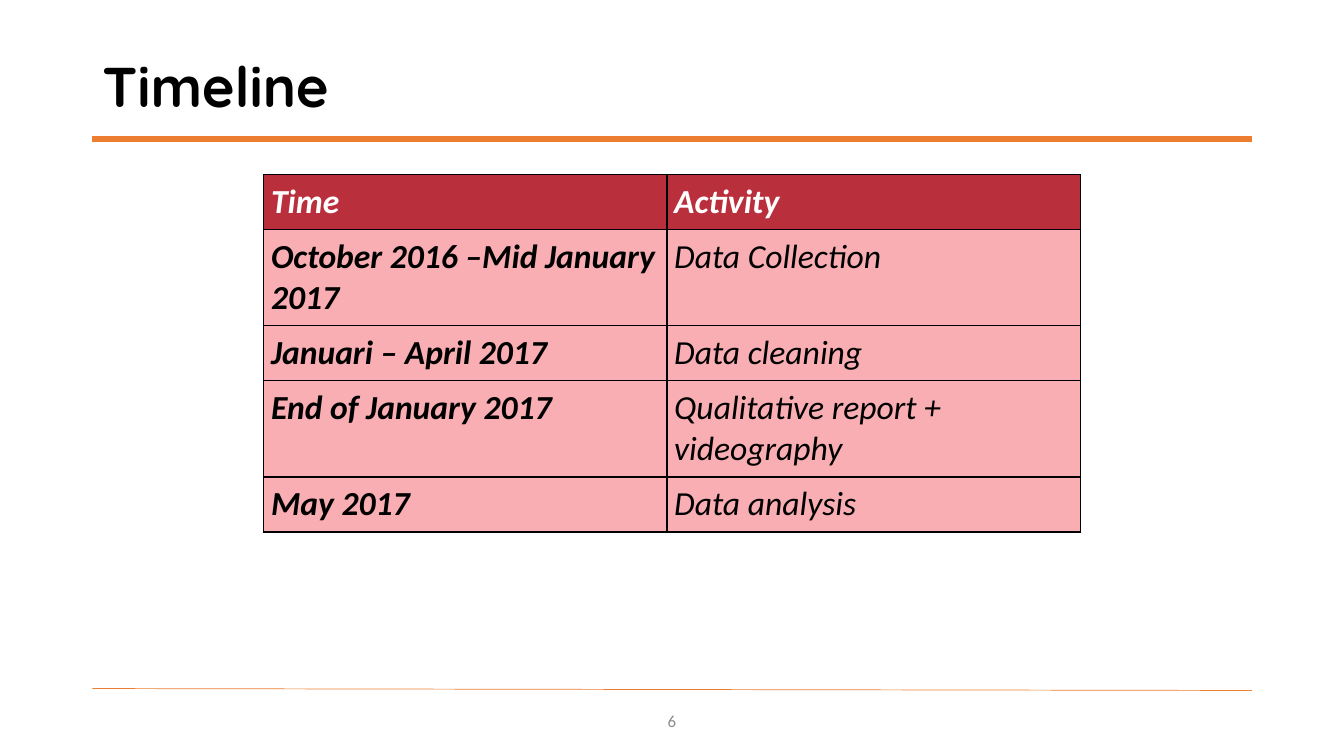
"""Build the project timeline slide."""
from typing import NamedTuple

from lxml import etree
from pptx import Presentation
from pptx.dml.color import RGBColor
from pptx.enum import shapes, text
from pptx.oxml import ns
from pptx.util import Cm, Pt

ORANGE = RGBColor(0xED, 0x7D, 0x31)
BLACK = RGBColor(0x00, 0x00, 0x00)
WHITE = RGBColor(0xFF, 0xFF, 0xFF)
GRAY = RGBColor(0x8C, 0x8C, 0x8C)
CRIMSON = RGBColor(0xBA, 0x2F, 0x3C)
PINK = RGBColor(0xF8, 0xAE, 0xB2)

CELL_MARGIN = Cm(0.18)
COLUMN_WIDTHS = (10.16, 10.41)
ROW_HEIGHTS = (1.39, 2.42, 1.39, 2.42, 1.39)


class Rule(NamedTuple):
    """A horizontal line across the page, in centimetres and points."""
    start: tuple[float, float]
    end: tuple[float, float]
    weight: float


class Label(NamedTuple):
    """A one-line text box, in centimetres and points."""
    words: str
    left: float
    top: float
    width: float
    height: float
    font: str
    size: float
    color: RGBColor
    bold: bool
    align: text.PP_ALIGN
    line_spacing: float


class Stage(NamedTuple):
    """A row of the timeline."""
    time: str
    activity: str


RULES = (
    Rule((2.33, 3.5), (31.55, 3.5), 4),
    Rule((31.55, 17.4), (2.33, 17.35), 0.5),
)
LABELS = (
    Label("Timeline", 2.33, 1.01, 29.21, 2.49, "Quicksand", 40, BLACK, True,
          text.PP_ALIGN.LEFT, 0.9),
    Label("6", 11.22, 17.66, 11.43, 1.01, "Calibri", 12, GRAY, False,
          text.PP_ALIGN.CENTER, 1.0),
)
STAGES = (
    Stage("Time", "Activity"),
    Stage("October 2016 –Mid January 2017", "Data Collection"),
    Stage("Januari – April 2017", "Data cleaning"),
    Stage("End of January 2017", "Qualitative report + videography"),
    Stage("May 2017", "Data analysis"),
)


def draw_rule(page, rule: Rule) -> None:
    """Draw one orange line without a shadow."""
    line = page.shapes.add_connector(
        shapes.MSO_CONNECTOR.STRAIGHT,
        *(Cm(length) for length in rule.start + rule.end))
    line.line.color.rgb = ORANGE
    line.line.width = Pt(rule.weight)
    etree.SubElement(line._element.spPr, ns.qn("a:effectLst"))


def draw_label(page, label: Label) -> None:
    """Draw one vertically centred text box."""
    box = page.shapes.add_textbox(Cm(label.left), Cm(label.top),
                                  Cm(label.width), Cm(label.height))
    frame = box.text_frame
    frame.text = label.words
    frame.word_wrap = True
    frame.vertical_anchor = text.MSO_ANCHOR.MIDDLE
    para = frame.paragraphs[0]
    para.alignment = label.align
    para.line_spacing = label.line_spacing
    font = para.runs[0].font
    font.name, font.size, font.bold = label.font, Pt(label.size), label.bold
    font.color.rgb = label.color


def add_borders(cell) -> None:
    """Give a cell thin black edges."""
    properties = cell._tc.get_or_add_tcPr()
    for position, side in enumerate(("lnL", "lnR", "lnT", "lnB")):
        edge = etree.Element(ns.qn(f"a:{side}"), w=str(Pt(1)))
        fill = etree.SubElement(edge, ns.qn("a:solidFill"))
        etree.SubElement(fill, ns.qn("a:srgbClr"), val=str(BLACK))
        properties.insert(position, edge)


def fill_cell(cell, words: str, header: bool, bold: bool) -> None:
    """Write and style one table cell."""
    cell.text = words
    cell.margin_left = cell.margin_right = CELL_MARGIN
    cell.margin_top = cell.margin_bottom = CELL_MARGIN
    cell.fill.solid()
    cell.fill.fore_color.rgb = CRIMSON if header else PINK
    font = cell.text_frame.paragraphs[0].runs[0].font
    font.name, font.size, font.bold, font.italic = "Calibri", Pt(24), bold, True
    font.color.rgb = WHITE if header else BLACK
    add_borders(cell)


def draw_timeline(page, stages: tuple[Stage, ...]) -> None:
    """Draw the table of stages."""
    table = page.shapes.add_table(
        len(stages), len(COLUMN_WIDTHS), Cm(6.65), Cm(4.4),
        Cm(sum(COLUMN_WIDTHS)), Cm(sum(ROW_HEIGHTS))).table
    for column, width in zip(table.columns, COLUMN_WIDTHS):
        column.width = Cm(width)
    for row, height in zip(table.rows, ROW_HEIGHTS):
        row.height = Cm(height)
    for row_index, stage in enumerate(stages):
        header = row_index == 0
        for column_index, words in enumerate(stage):
            fill_cell(table.cell(row_index, column_index), words, header,
                      header or column_index == 0)


def main() -> None:
    """Assemble and save the deck."""
    deck = Presentation()
    deck.slide_width, deck.slide_height = Cm(33.87), Cm(19.05)
    page = deck.slides.add_slide(deck.slide_layouts[6])
    for rule in RULES:
        draw_rule(page, rule)
    for label in LABELS:
        draw_label(page, label)
    draw_timeline(page, STAGES)
    deck.save("out.pptx")


if __name__ == "__main__":
    main()
